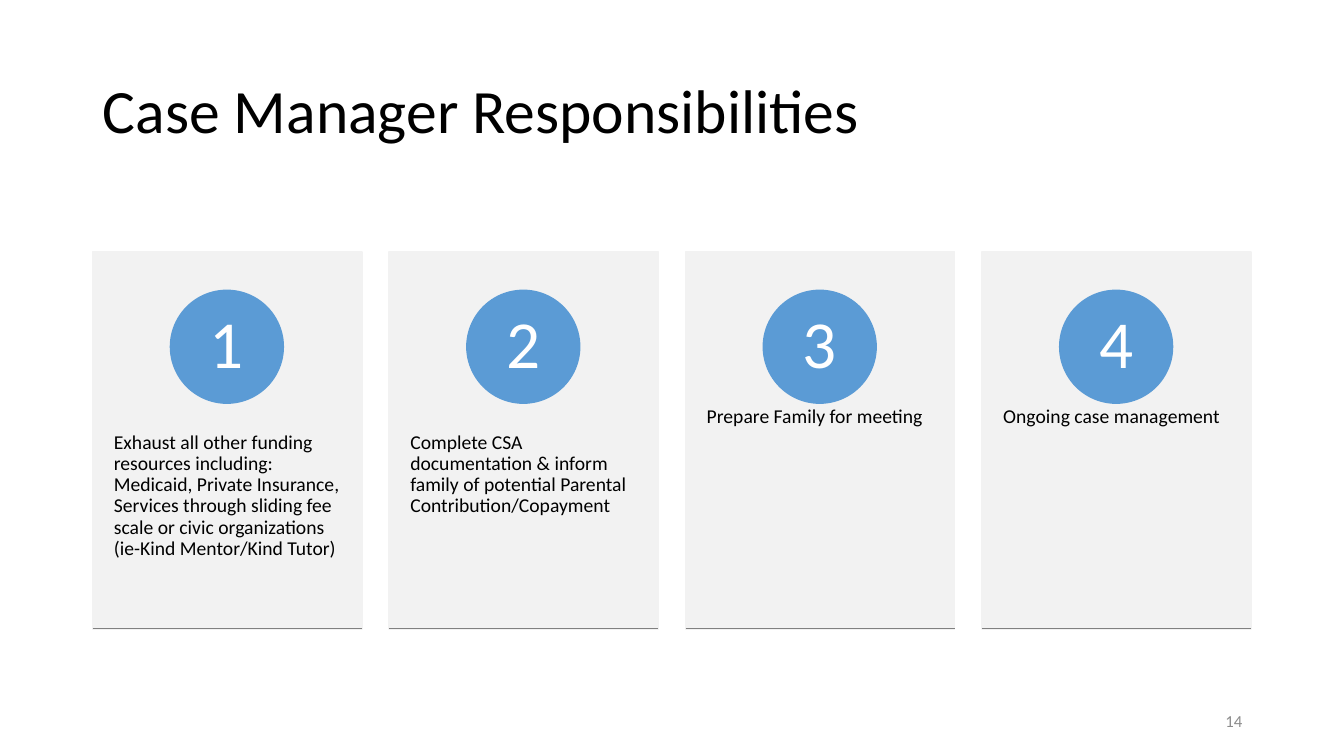
import pptx
import pptx.util
import pptx.dml.color
import pptx.enum.shapes
import pptx.enum.text
import pptx.oxml
import pptx.oxml.ns
from dataclasses import dataclass

ALIGN = pptx.enum.text.PP_ALIGN
ANCHOR = pptx.enum.text.MSO_ANCHOR
SHAPE = pptx.enum.shapes.MSO_SHAPE


@dataclass(frozen=True)
class Theme:
    font: str = "Calibri"
    ink: str = "000000"
    card: str = "F2F2F2"
    accent: str = "5B9BD5"
    on_accent: str = "FFFFFF"
    rule: str = "808080"
    muted: str = "8C8C8C"
    title_size: int = 44
    number_size: int = 48
    body_size: int = 14
    page_size: int = 12


THEME = Theme()
RESPONSIBILITIES = [
    "Exhaust all other funding resources including: Medicaid, Private Insurance, "
    "Services through sliding fee scale or civic organizations "
    "(ie-Kind Mentor/Kind Tutor)",
    "Complete CSA documentation & inform family of potential Parental "
    "Contribution/Copayment",
    "Prepare Family for meeting",
    "Ongoing case management",
]


def px(length):
    """100 px to the inch."""
    return pptx.util.Emu(length * 9144)


def rgb(code):
    return pptx.dml.color.RGBColor.from_string(code)


def write(frame, text, size, color, align=ALIGN.LEFT, anchor=ANCHOR.TOP,
          inset=(10, 5), spacing=0.9):
    frame.text = text
    frame.word_wrap = True
    frame.vertical_anchor = anchor
    frame.margin_left = frame.margin_right = px(inset[0])
    frame.margin_top = frame.margin_bottom = px(inset[1])
    paragraph = frame.paragraphs[0]
    paragraph.alignment = align
    paragraph.line_spacing = spacing
    font = paragraph.runs[0].font
    font.name = THEME.font
    font.size = pptx.util.Pt(size)
    font.color.rgb = rgb(color)


def add_filled(slide, kind, box, color):
    filled = slide.shapes.add_shape(kind, *map(px, box))
    filled.shadow.inherit = False
    filled.fill.solid()
    filled.fill.fore_color.rgb = rgb(color)
    filled.line.color.rgb = rgb(color)
    filled.line.width = pptx.util.Pt(1)
    return filled


def add_title(slide, box, text):
    title = slide.shapes.title
    title.left, title.top, title.width, title.height = map(px, box)
    write(title.text_frame, text, THEME.title_size, THEME.ink, anchor=ANCHOR.MIDDLE)


def add_card(slide, box, number, duty):
    left, top, width, height = box
    add_filled(slide, SHAPE.RECTANGLE, box, THEME.card)

    # Description
    description = slide.shapes.add_textbox(
        *map(px, (left, top + 143, width, 225)))
    write(description.text_frame, duty, THEME.body_size, THEME.ink, inset=(21, 36))

    # Numbered circle
    diameter = 112
    circle = add_filled(
        slide, SHAPE.OVAL,
        (left + (width - diameter) // 2, top + 38, diameter, diameter), THEME.accent)
    write(circle.text_frame, str(number), THEME.number_size, THEME.on_accent,
          ALIGN.CENTER, ANCHOR.MIDDLE, inset=(0, 0))

    # Rule along the bottom edge
    bottom = top + height
    rule = slide.shapes.add_connector(
        pptx.enum.shapes.MSO_CONNECTOR.STRAIGHT,
        *map(px, (left, bottom, left + width, bottom)))
    rule.line.color.rgb = rgb(THEME.rule)
    rule.line.width = pptx.util.Pt(0.75)
    rule._element.spPr.append(pptx.oxml.parse_xml(
        "<a:effectLst %s/>" % pptx.oxml.ns.nsdecls("a")))


def add_cards(slide, box, duties, gap):
    left, top, width, height = box
    card_width = (width - gap * (len(duties) - 1)) // len(duties)
    for index, duty in enumerate(duties):
        card_left = left + index * (card_width + gap)
        add_card(slide, (card_left, top, card_width, height), index + 1, duty)


def add_page_number(slide, box, number):
    page = slide.shapes.add_textbox(*map(px, box))
    write(page.text_frame, str(number), THEME.page_size, THEME.muted,
          ALIGN.RIGHT, ANCHOR.MIDDLE, spacing=1.0)


def main():
    deck = pptx.Presentation()
    deck.slide_width, deck.slide_height = px(1333), px(750)
    slide = deck.slides.add_slide(deck.slide_layouts[5])
    add_title(slide, (92, 40, 1150, 145), "Case Manager Responsibilities")
    add_cards(slide, (92, 250, 1150, 374), RESPONSIBILITIES, gap=27)
    add_page_number(slide, (942, 695, 300, 40), 14)
    deck.save("out.pptx")


if __name__ == "__main__":
    main()
